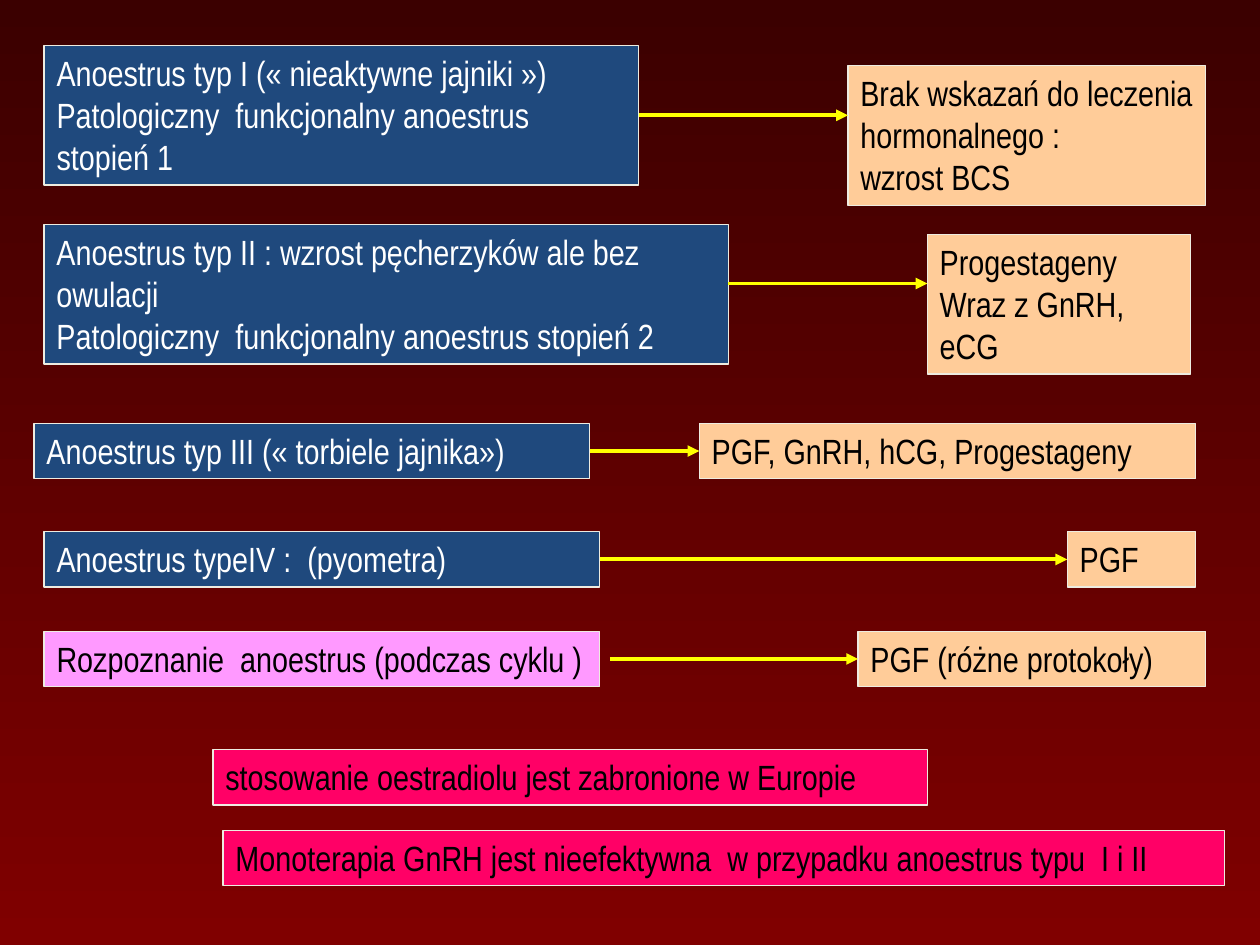
from dataclasses import dataclass

from lxml.etree import SubElement
from pptx import Presentation
from pptx.dml.color import RGBColor as Rgb
from pptx.enum.shapes import MSO_CONNECTOR as Connector, MSO_SHAPE as Preset
from pptx.enum.text import MSO_ANCHOR as Anchor, MSO_AUTO_SIZE as AutoSize, PP_ALIGN as Align
from pptx.oxml.ns import qn
from pptx.util import Inches, Pt

WIDTH, HEIGHT = Inches(10), Inches(7.5)
TOP, LEFT, RIGHT = 0, 1, 3
TALL, LOW = 14.8, 5.86


@dataclass(frozen=True)
class Theme:
    """Colours and type of the slide."""
    sky: str = "3B0000"
    ground: str = "800000"
    type_fill: str = "1F497D"
    cycle_fill: str = "FF99FF"
    therapy_fill: str = "FFCC99"
    warning_fill: str = "FF0066"
    outline: str = "EEECE1"
    arrow: str = "FFFF00"
    light: str = "FFFFFF"
    dark: str = "000000"
    font: str = "Arial Narrow"
    size: int = 20


THEME = Theme()

FRAME_FORMAT = {"word_wrap": True, "auto_size": AutoSize.SHAPE_TO_FIT_TEXT,
                "vertical_anchor": Anchor.TOP}
FONT_FORMAT = {"name": THEME.font, "size": Pt(THEME.size)}

# (diagnosis box, therapy box, arrow level, gap before arrow); boxes in % of the slide
PATHWAYS = [
    (("Anoestrus typ I (« nieaktywne jajniki »)\nPatologiczny  funkcjonalny anoestrus stopień 1",
      (3.5, 4.8, 47.2, TALL), THEME.type_fill, THEME.light),
     ("Brak wskazań do leczenia hormonalnego :\nwzrost BCS", (67.3, 6.93, 28.4, TALL)), 12.2, 0),
    (("Anoestrus typ II : wzrost pęcherzyków ale bez owulacji\n"
      "Patologiczny  funkcjonalny anoestrus stopień 2",
      (3.5, 23.73, 54.3, TALL), THEME.type_fill, THEME.light),
     ("Progestageny\nWraz z GnRH, eCG", (73.6, 24.8, 20.9, TALL)), 30, 0),
    (("Anoestrus typ III (« torbiele jajnika»)",
      (2.7, 44.8, 44.1, LOW), THEME.type_fill, THEME.light),
     ("PGF, GnRH, hCG, Progestageny", (55.5, 44.8, 39.4, LOW)), 47.73, 0),
    (("Anoestrus typeIV :  (pyometra)",
      (3.5, 56.27, 44.1, LOW), THEME.type_fill, THEME.light),
     ("PGF", (84.7, 56.27, 10.2, LOW)), 59.2, 0),
    (("Rozpoznanie  anoestrus (podczas cyklu )",
      (3.5, 66.8, 44.1, LOW), THEME.cycle_fill, THEME.dark),
     ("PGF (różne protokoły)", (68.1, 66.8, 27.6, LOW)), 69.73, 0.8),
]

WARNINGS = [
    ("stosowanie oestradiolu jest zabronione w Europie", (16.9, 79.33, 56.7, LOW)),
    ("Monoterapia GnRH jest nieefektywna  w przypadku anoestrus typu  I i II",
     (17.7, 87.87, 79.5, LOW)),
]


def across(share):
    """Turn a percentage of the slide width into a length."""
    return round(WIDTH * share / 100)


def down(share):
    """Turn a percentage of the slide height into a length."""
    return round(HEIGHT * share / 100)


def apply_format(target, values):
    """Set every attribute of a format on the target."""
    for attribute, value in values.items():
        setattr(target, attribute, value)


def paint_background(slide):
    """Fill the slide with a gradient running from top to bottom."""
    fill = slide.background.fill
    fill.gradient()
    fill.gradient_angle = 270
    for stop, colour, position in zip(fill.gradient_stops, (THEME.sky, THEME.ground), (0, 1)):
        apply_format(stop, {"position": position})
        stop.color.rgb = Rgb.from_string(colour)


def add_box(slide, wording, place, fill, ink):
    """Add an outlined box with left-aligned wording."""
    left, top, width, height = place
    box = slide.shapes.add_shape(
        Preset.RECTANGLE, across(left), down(top), across(width), down(height))
    box.shadow.inherit = False
    box.fill.solid()
    box.fill.fore_color.rgb = Rgb.from_string(fill)
    box.line.color.rgb = Rgb.from_string(THEME.outline)
    box.line.width = Pt(0.75)
    box.text_frame.text = wording
    apply_format(box.text_frame, FRAME_FORMAT)
    for paragraph in box.text_frame.paragraphs:
        paragraph.alignment = Align.LEFT
        for run in paragraph.runs:
            apply_format(run.font, FONT_FORMAT)
            run.font.color.rgb = Rgb.from_string(ink)
    return box


def is_middle(box, height):
    """Tell whether a height falls at the middle of a box's sides."""
    return abs(box.top + box.height / 2 - height) < Inches(0.01)


def add_arrow(slide, diagnosis, therapy, level, gap):
    """Draw a level arrow from diagnosis to therapy, joined at side middles."""
    height = down(level)
    start = diagnosis.left + diagnosis.width + across(gap)
    arrow = slide.shapes.add_connector(
        Connector.STRAIGHT, start, height, therapy.left, height)
    if not gap and is_middle(diagnosis, height):
        arrow.begin_connect(diagnosis, RIGHT)
    if is_middle(therapy, height):
        arrow.end_connect(therapy, LEFT)
    arrow.line.color.rgb = Rgb.from_string(THEME.arrow)
    arrow.line.width = Pt(2.25)
    SubElement(arrow.line._get_or_add_ln(), qn("a:tailEnd"), type="triangle")
    SubElement(arrow._element.spPr, qn("a:effectLst"))


def main():
    """Build the slide on anoestrus types and their therapies."""
    deck = Presentation()
    apply_format(deck, {"slide_width": WIDTH, "slide_height": HEIGHT})
    slide = deck.slides.add_slide(deck.slide_layouts.get_by_name("Blank"))
    paint_background(slide)
    for diagnosis, therapy, level, gap in PATHWAYS:
        diagnosis_box = add_box(slide, *diagnosis)
        therapy_box = add_box(slide, *therapy, THEME.therapy_fill, THEME.dark)
        add_arrow(slide, diagnosis_box, therapy_box, level, gap)
    for wording, place in WARNINGS:
        add_box(slide, wording, place, THEME.warning_fill, THEME.dark)
    deck.save("out.pptx")


if __name__ == "__main__":
    main()
